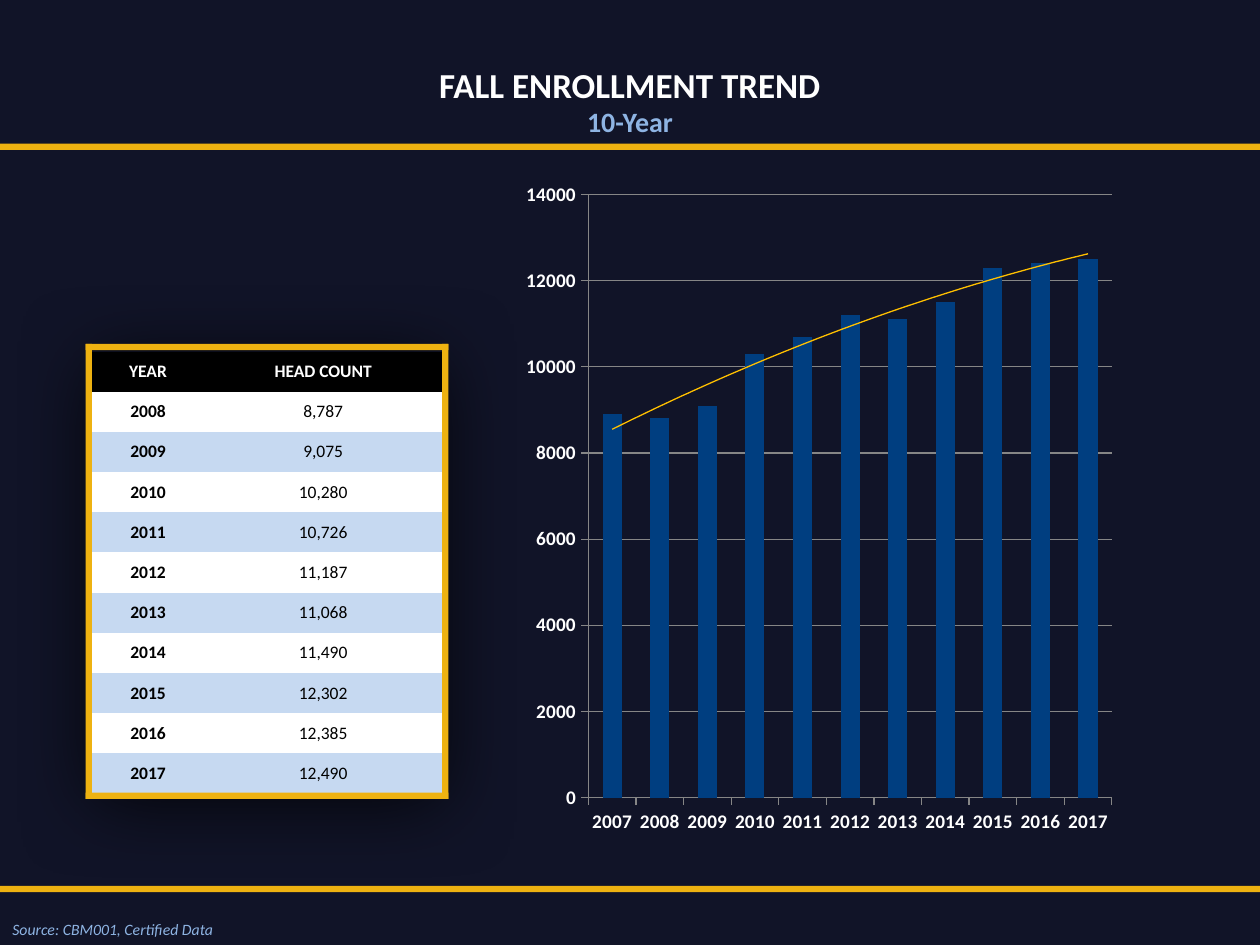
from pptx import Presentation
from pptx.chart.data import CategoryChartData
from pptx.dml.color import RGBColor
from pptx.enum.chart import XL_CHART_TYPE as CT, XL_TICK_MARK as TICK
from pptx.enum.shapes import MSO_SHAPE as SHAPE
from pptx.enum.text import MSO_ANCHOR as ANCHOR, MSO_AUTO_SIZE as FIT, PP_ALIGN as ALIGN
from pptx.oxml import parse_xml
from pptx.oxml.ns import nsdecls, qn
from pptx.util import Inches, Pt

FONT = "Calibri"
NAVY, GOLD, SKY, WHITE, BLACK = "111428", "EEB211", "8EB4E3", "FFFFFF", "000000"
BAR, BAND, GRID, TREND = "003E80", "C6D9F1", "868686", "FFC000"
NO_GRID_STYLE = "{2D5ABB26-0587-4C30-8999-92F81FD0307C}"
HEAD_COUNTS = {
    "2007": 8900, "2008": 8787, "2009": 9075, "2010": 10280,
    "2011": 10726, "2012": 11187, "2013": 11068, "2014": 11490,
    "2015": 12302, "2016": 12385, "2017": 12490,
}


def rgb(color):
    """Return the colour for a hex string."""
    return RGBColor.from_string(color)


def style_font(font, size, color, bold=False, italic=False):
    """Set the face, size, colour and weight of a font."""
    font.name, font.size = FONT, Pt(size)
    font.bold, font.italic = bold, italic
    font.color.rgb = rgb(color)


def write(p, text, align=ALIGN.LEFT, **fmt):
    """Put one formatted run into a paragraph."""
    p.alignment = align
    r = p.add_run()
    r.text = text
    style_font(r.font, **fmt)


def place(sp, x, y, w, h):
    """Move and size a shape in inches."""
    sp.left, sp.top, sp.width, sp.height = map(Inches, (x, y, w, h))


def add_title(s, title, subtitle):
    """Fill the title placeholder with a title and a subtitle line."""
    sp = s.shapes.title
    place(sp, 0, 0.45, 10, 1)
    tf = sp.text_frame
    tf.auto_size, tf.vertical_anchor = FIT.NONE, ANCHOR.TOP
    write(tf.paragraphs[0], title, ALIGN.CENTER, size=20, color=WHITE, bold=True)
    write(tf.add_paragraph(), subtitle, ALIGN.CENTER, size=16, color=SKY, bold=True)


def add_source(s, text):
    """Add the source line at the foot of the slide."""
    sp = s.shapes.add_textbox(0, Inches(7.25), Inches(1.84), Inches(0.25))
    sp.text_frame.word_wrap = True
    write(sp.text_frame.paragraphs[0], text, size=9, color=SKY, italic=True)


def add_rule(s, x, y, w, h):
    """Add a solid gold bar."""
    sp = s.shapes.add_shape(SHAPE.RECTANGLE, *map(Inches, (x, y, w, h)))
    sp.shadow.inherit = False
    sp.fill.solid()
    sp.fill.fore_color.rgb = rgb(GOLD)
    sp.line.fill.background()


def add_frame(s, x, y, w, h, t=0.05):
    """Add four gold bars around a table."""
    for top in (y, y + h - t):
        add_rule(s, x, top, w, t)
    for left in (x, x + w - t):
        add_rule(s, left, y, t, h)


def fill_cell(cell, text, fill, color, bold):
    """Write a centred table cell on a solid fill."""
    cell.fill.solid()
    cell.fill.fore_color.rgb = rgb(fill)
    cell.vertical_anchor = ANCHOR.MIDDLE
    cell.margin_left = cell.margin_right = Inches(0.04)
    cell.margin_top = cell.margin_bottom = Inches(0.04)
    write(cell.text_frame.paragraphs[0], text, ALIGN.CENTER,
          size=10, color=color, bold=bold)


def add_count_table(s, x, y, w, h):
    """Add the banded table of yearly head counts with a soft shadow."""
    rows = [("YEAR", "HEAD COUNT")]
    rows += [(year, f"{n:,}") for year, n in HEAD_COUNTS.items() if year > "2007"]
    table = s.shapes.add_table(len(rows), 2, *map(Inches, (x, y, w, h))).table
    for col, width in zip(table.columns, (0.89, w - 0.89)):
        col.width = Inches(width)
    for i, values in enumerate(rows):
        fill = BLACK if i == 0 else (BAND, WHITE)[i % 2]
        for j, text in enumerate(values):
            fill_cell(table.cell(i, j), text, fill,
                      BLACK if i else WHITE, i == 0 or j == 0)
    shadow = parse_xml(
        f'<a:effectLst {nsdecls("a")}><a:outerShdw blurRad="571500" '
        f'dist="{Inches(0.07)}" dir="5400000"><a:srgbClr val="{BLACK}">'
        '<a:alpha val="80000"/></a:srgbClr></a:outerShdw></a:effectLst>')
    props = table._tbl.tblPr
    props.find(qn("a:tableStyleId")).text = NO_GRID_STYLE
    props.insert(0, shadow)


def style_axis(axis):
    """Give an axis white bold labels, a grey line and outer ticks."""
    style_font(axis.tick_labels.font, 11, WHITE, bold=True)
    axis.format.line.color.rgb = rgb(GRID)
    axis.major_tick_mark = TICK.OUTSIDE


def add_trend(series):
    """Add a second-order polynomial trend line to a series."""
    trend = parse_xml(
        f'<c:trendline {nsdecls("c", "a")}><c:spPr><a:ln w="{Pt(0.75)}"><a:solidFill>'
        f'<a:srgbClr val="{TREND}"/></a:solidFill></a:ln></c:spPr>'
        '<c:trendlineType val="poly"/><c:order val="2"/>'
        '<c:dispRSqr val="0"/><c:dispEq val="0"/></c:trendline>')
    series._element.find(qn("c:cat")).addprevious(trend)


def set_plot_area(chart, **box):
    """Fix the inner plot area as fractions of the chart."""
    area = chart._chartSpace.chart.plotArea
    for old in area.findall(qn("c:layout")):
        area.remove(old)
    sizes = "".join(f'<c:{k} val="{v}"/>' for k, v in box.items())
    area.insert(0, parse_xml(
        f'<c:layout {nsdecls("c")}><c:manualLayout><c:layoutTarget val="inner"/>'
        f'<c:xMode val="edge"/><c:yMode val="edge"/>{sizes}</c:manualLayout></c:layout>'))


def add_trend_chart(s, x, y, w, h):
    """Add the column chart of head counts, in hundreds, with its trend line."""
    data = CategoryChartData(number_format="General")
    data.categories = list(HEAD_COUNTS)
    data.add_series("Series 1", [round(n, -2) for n in HEAD_COUNTS.values()])
    chart = s.shapes.add_chart(
        CT.COLUMN_CLUSTERED, *map(Inches, (x, y, w, h)), data).chart
    chart.has_legend = chart.has_title = False
    style_font(chart.font, 18, BLACK)
    for axis in (chart.category_axis, chart.value_axis):
        style_axis(axis)
    axis = chart.value_axis
    axis.minimum_scale, axis.maximum_scale, axis.major_unit = 0, 14000, 2000
    axis.major_gridlines.format.line.color.rgb = rgb(GRID)
    plot = chart.plots[0]
    plot.gap_width, plot.vary_by_categories = 150, False
    series = plot.series[0]
    series.format.fill.solid()
    series.format.fill.fore_color.rgb = rgb(BAR)
    add_trend(series)
    set_plot_area(chart, x=0.105, y=0.015, w=0.681, h=0.874)


def main():
    """Build the enrollment slide."""
    prs = Presentation()
    prs.slide_width, prs.slide_height = Inches(10), Inches(7.5)
    s = prs.slides.add_slide(prs.slide_layouts[5])
    s.background.fill.solid()
    s.background.fill.fore_color.rgb = rgb(NAVY)
    add_count_table(s, 0.73, 2.79, 2.78, 3.51)
    add_trend_chart(s, 4.03, 1.45, 6.1, 5.49)
    add_title(s, "FALL ENROLLMENT TREND", "10-Year")
    add_source(s, "Source: CBM001, Certified Data")
    for y in (1.14, 7.03):
        add_rule(s, 0, y, 10, 0.05)
    add_frame(s, 0.68, 2.73, 2.88, 3.61)
    prs.save("out.pptx")


if __name__ == "__main__":
    main()
